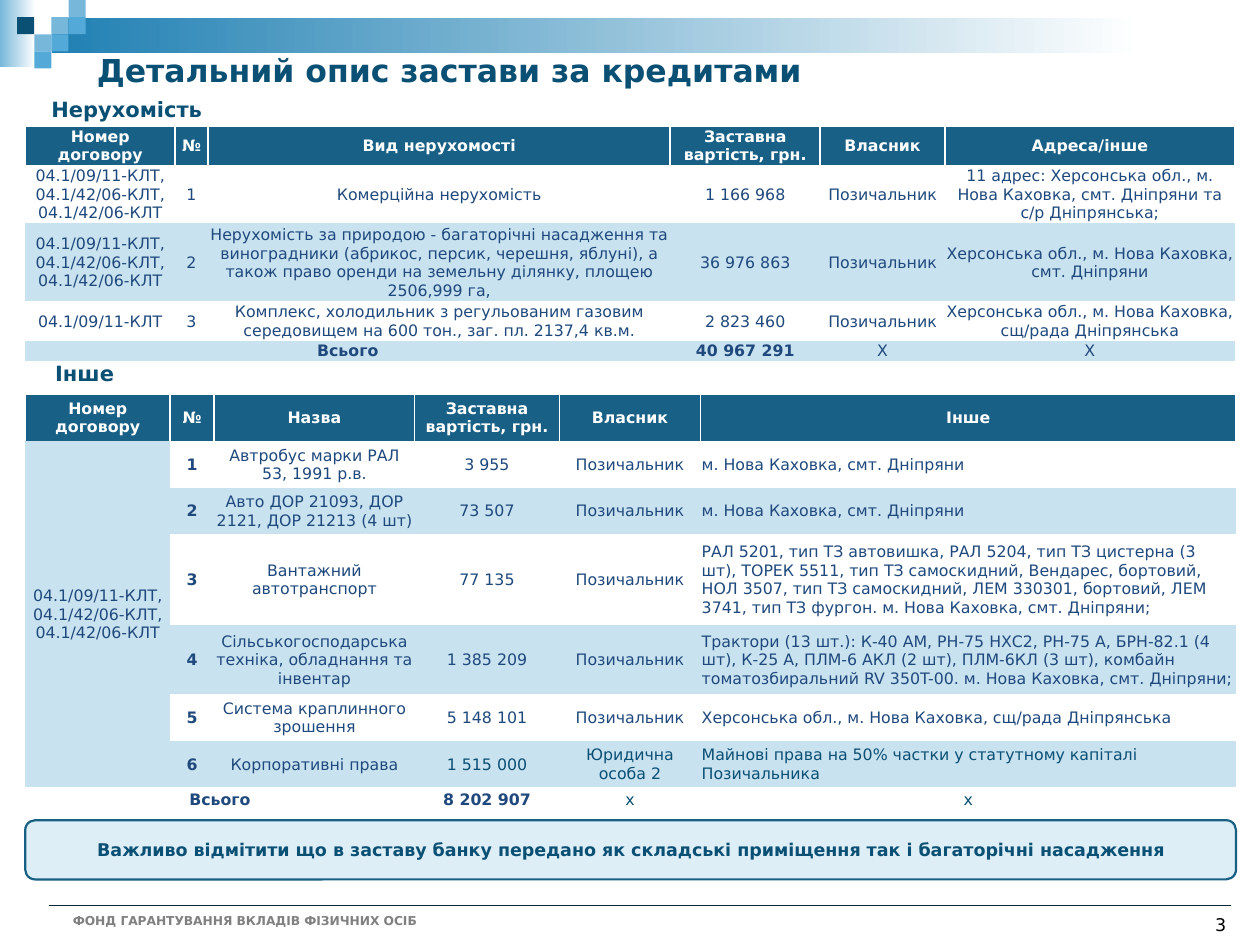
"""Builds the slide on loan collateral: two tables, headings and a callout."""
from lxml.etree import SubElement
from pptx import Presentation
from pptx.dml.color import RGBColor
from pptx.enum.shapes import MSO_CONNECTOR, MSO_SHAPE
from pptx.enum.text import MSO_ANCHOR, PP_ALIGN
from pptx.oxml.ns import qn
from pptx.util import Inches, Pt

HUES = {"navy": "0A4F74", "head": "186086", "band": "C9E2F0", "white": "FFFFFF",
        "body": "1F497D", "sky": "77B7D9", "blue": "53AAD9", "deep": "2080B3",
        "pale": "DDEEF7", "edge": "185F84", "rule": "05273A", "grey": "808080",
        "black": "000000"}
FONT = "DejaVu Sans"
PLAIN = "{2D5ABB26-0587-4C30-8999-92F81FD0307C}"
WIDE, TALL = 10, 7.5
LEFT, SPAN = 0.2, 9.61
UNIT = 0.136

DEALS = "\v".join(["04.1/09/11-КЛТ,", "04.1/42/06-КЛТ,", "04.1/42/06-КЛТ"])
OWNER = "Позичальник"
TOWN = "м. Нова Каховка, смт. Дніпряни"

ESTATE = {
    "top": 1.0,
    "cols": [1.19, 0.26, 3.67, 1.19, 0.99, 2.3],
    "rows": [0.3, 0.46, 0.62, 0.31, 0.16],
    "cells": [
        ["Номер договору", "№", "Вид нерухомості", "Заставна вартість, грн.", "Власник",
         "Адреса/інше"],
        [DEALS, "1", "Комерційна нерухомість", "1 166 968", OWNER,
         "11 адрес: Херсонська обл., м. Нова Каховка, смт. Дніпряни та с/р Дніпрянська;"],
        [DEALS, "2", "Нерухомість за природою - багаторічні насадження та виноградники "
         "(абрикос, персик, черешня, яблуні), а також право оренди на земельну ділянку, "
         "площею 2506,999 га,", "36 976 863", OWNER,
         "Херсонська обл., м. Нова Каховка, смт. Дніпряни"],
        ["04.1/09/11-КЛТ", "3", "Комплекс, холодильник з регульованим газовим середовищем "
         "на 600 тон., заг. пл. 2137,4 кв.м.", "2 823 460", OWNER,
         "Херсонська обл., м. Нова Каховка, сщ/рада Дніпрянська"],
        ["Всього", "", "", "40 967 291", "Х", "Х"]],
    "joins": [(4, 0, 4, 2)], "bold": [], "left": [], "navy": []}

OTHER = {
    "top": 3.13,
    "cols": [1.15, 0.35, 1.59, 1.15, 1.12, 4.25],
    "rows": [0.37, 0.37, 0.37, 0.72, 0.55, 0.37, 0.37, 0.19],
    "cells": [
        ["Номер договору", "№", "Назва", "Заставна вартість, грн.", "Власник", "Інше"],
        [DEALS, "1", "Автробус марки РАЛ 53, 1991 р.в.", "3 955", OWNER, TOWN],
        ["", "2", "Авто ДОР 21093, ДОР 2121, ДОР 21213 (4 шт)", "73 507", OWNER, TOWN],
        ["", "3", "Вантажний автотранспорт", "77 135", OWNER,
         "РАЛ 5201, тип ТЗ автовишка, РАЛ 5204, тип ТЗ цистерна (3 шт), ТОРЕК 5511, тип ТЗ "
         "самоскидний, Вендарес, бортовий, НОЛ 3507, тип ТЗ самоскидний, ЛЕМ 330301, "
         "бортовий, ЛЕМ 3741, тип ТЗ фургон. м. Нова Каховка, смт. Дніпряни;"],
        ["", "4", "Сільськогосподарська техніка, обладнання та інвентар", "1 385 209", OWNER,
         "Трактори (13 шт.): К-40 АМ, РН-75 НХС2, РН-75 А, БРН-82.1 (4 шт), К-25 А, "
         "ПЛМ-6 АКЛ (2 шт), ПЛМ-6КЛ (3 шт), комбайн томатозбиральний RV 350T-00. "
         "м. Нова Каховка, смт. Дніпряни;"],
        ["", "5", "Система краплинного зрошення", "5 148 101", OWNER,
         "Херсонська обл., м. Нова Каховка, сщ/рада Дніпрянська"],
        ["", "6", "Корпоративні права", "1 515 000", "Юридична особа 2",
         "Майнові права на 50% частки у статутному капіталі Позичальника"],
        ["Всього", "", "", "8 202 907", "х", "х"]],
    "joins": [(1, 0, 6, 0), (7, 0, 7, 2)], "bold": [1], "left": [5],
    "navy": [(6, 3), (6, 4), (6, 5), (7, 4), (7, 5)]}

BARS = [((0, 0, 0.28, 0.53), "sky"), ((0.41, 0.14, 8.65, 0.28), "deep")]
TILES = [(3, 1, "sky"), (4, 0, "sky"), (4, 1, "blue"), (2, 2, "sky"),
         (1, 1, "navy"), (3, 2, "blue"), (2, 3, "blue")]
NOTES = [
    ("3", (8.91, 6.95, 0.92, 0.52), 10, "black", False, PP_ALIGN.RIGHT, MSO_ANCHOR.BOTTOM),
    ("ФОНД ГАРАНТУВАННЯ ВКЛАДІВ ФІЗИЧНИХ ОСІБ", (0.48, 7.2, 8.2, 0.22), 7, "grey", True,
     PP_ALIGN.LEFT, MSO_ANCHOR.TOP),
    ("Детальний опис застави за кредитами", (0.67, 0.36, 8.43, 0.4), 18, "navy", True,
     PP_ALIGN.LEFT, MSO_ANCHOR.TOP),
    ("Нерухомість", (0.31, 0.72, 1.6, 0.3), 12, "navy", True, PP_ALIGN.LEFT, MSO_ANCHOR.TOP),
    ("Інше", (0.34, 2.81, 1.6, 0.3), 12, "navy", True, PP_ALIGN.LEFT, MSO_ANCHOR.TOP)]
CALL = ("Важливо відмітити що в заставу банку передано як складські приміщення "
        "так і багаторічні насадження")


def hue(name):
    return RGBColor.from_string(HUES[name])


def put(item, values):
    for key, value in values.items():
        setattr(item, key, value)


def write(frame, text, size, color, bold, align):
    line = frame.paragraphs[0]
    line.alignment = align
    line.text = text
    put(line.font, {"name": FONT, "size": Pt(size), "bold": bold})
    line.font.color.rgb = hue(color)


def block(slide, box, color, kind=MSO_SHAPE.RECTANGLE):
    shape = slide.shapes.add_shape(kind, *map(Inches, box))
    shape.shadow.inherit = False
    shape.fill.solid()
    shape.fill.fore_color.rgb = hue(color)
    shape.line.fill.background()
    return shape


def fade(shape, color):
    shape.fill.gradient()
    shape.fill.gradient_angle = 0
    for stop, (place, name) in zip(shape.fill.gradient_stops, [(0, color), (1, "white")]):
        stop.position = place
        stop.color.rgb = hue(name)


def edge(cell):
    props = cell._tc.get_or_add_tcPr()
    for at, side in enumerate(("a:lnL", "a:lnR", "a:lnT")):
        line = SubElement(props, qn(side), w=str(Pt(1)))
        SubElement(SubElement(line, qn("a:solidFill")), qn("a:srgbClr"), val=HUES["white"])
        props.insert(at, line)


def grid(slide, data):
    cells, rows, cols = data["cells"], data["rows"], data["cols"]
    size = map(Inches, (LEFT, data["top"], SPAN, sum(rows)))
    table = slide.shapes.add_table(len(rows), len(cols), *size).table
    table._tbl.tblPr.find(qn("a:tableStyleId")).text = PLAIN
    for col, width in zip(table.columns, cols):
        col.width = Inches(width)
    for row, height in zip(table.rows, rows):
        row.height = Inches(height)
    for r, texts in enumerate(cells):
        for c, text in enumerate(texts):
            cell = table.cell(r, c)
            head, total = r == 0, r == len(rows) - 1
            merged = (r, c) in [join[:2] for join in data["joins"]] and not total
            put(cell, {"margin_left": Inches(0.01), "margin_right": Inches(0.01),
                       "margin_top": Inches(0.01), "margin_bottom": 0,
                       "vertical_anchor": MSO_ANCHOR.MIDDLE})
            cell.fill.solid()
            fill = "head" if head else "band" if r % 2 == 0 or merged else "white"
            cell.fill.fore_color.rgb = hue(fill)
            color = "white" if head else "navy" if (r, c) in data["navy"] else "body"
            bold = head or c in data["bold"] or (total and c < 4)
            left = c in data["left"] and not head and not total
            align = PP_ALIGN.LEFT if left else PP_ALIGN.CENTER
            write(cell.text_frame, text, 9, color, bold, align)
            if head:
                edge(cell)
    for top, left, low, right in data["joins"]:
        table.cell(top, left).merge(table.cell(low, right))


def main():
    deck = Presentation()
    put(deck, {"slide_width": Inches(WIDE), "slide_height": Inches(TALL)})
    slide = deck.slides.add_slide(deck.slide_layouts[6])
    for box, color in BARS:
        fade(block(slide, box, color), color)
    for col, row, color in TILES:
        block(slide, (col * UNIT, row * UNIT, UNIT, UNIT), color)
    ends = map(Inches, (0.39, 7.19, 9.77, 7.19))
    rule = slide.shapes.add_connector(MSO_CONNECTOR.STRAIGHT, *ends)
    rule.line.color.rgb = hue("rule")
    rule.line.width = Pt(0.5)
    SubElement(rule._element.spPr, qn("a:effectLst"))
    for text, box, size, color, bold, align, anchor in NOTES:
        frame = slide.shapes.add_textbox(*map(Inches, box)).text_frame
        put(frame, {"word_wrap": True, "vertical_anchor": anchor})
        write(frame, text, size, color, bold, align)
    call = block(slide, (LEFT, 6.51, SPAN, 0.47), "pale", MSO_SHAPE.ROUNDED_RECTANGLE)
    call.line.color.rgb = hue("edge")
    call.line.width = Pt(1.25)
    put(call.text_frame, {"word_wrap": True, "vertical_anchor": MSO_ANCHOR.MIDDLE})
    write(call.text_frame, CALL, 10, "navy", True, PP_ALIGN.CENTER)
    for data in (ESTATE, OTHER):
        grid(slide, data)
    deck.save("out.pptx")


if __name__ == "__main__":
    main()
